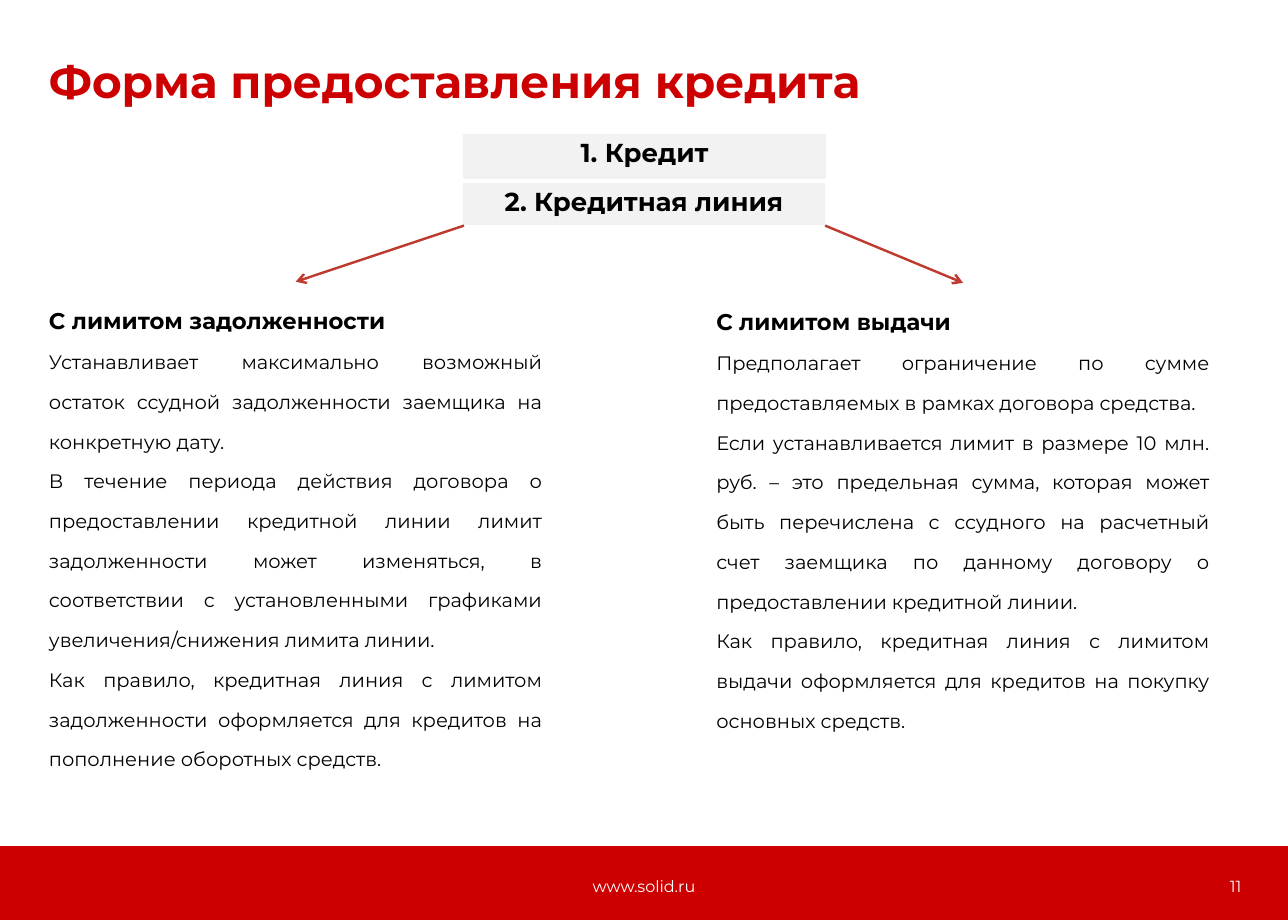
"""Builds a slide that compares two kinds of credit line."""
import pptx
import pptx.dml.color
import pptx.enum.shapes
import pptx.enum.text
import pptx.oxml.ns
import pptx.util
from lxml import etree

Inches = pptx.util.Inches
ALIGN = pptx.enum.text.PP_ALIGN
ANCHOR = pptx.enum.text.MSO_ANCHOR
RECTANGLE = pptx.enum.shapes.MSO_SHAPE.RECTANGLE
FONT = "Montserrat"
RED, GREY, BLACK, WHITE, ARROW_RED = "CC0000", "F2F2F2", "000000", "FFFFFF", "BE3B30"
PAGE_WIDTH, PAGE_HEIGHT = 11.02, 7.87

DEBT_LIMIT = [
    "С лимитом задолженности",
    "Устанавливает максимально возможный остаток ссудной задолженности заемщика "
    "на конкретную дату.",
    "В течение периода действия договора о предоставлении кредитной линии лимит "
    "задолженности может изменяться, в соответствии с установленными графиками "
    "увеличения/снижения лимита линии.",
    "Как правило, кредитная линия с лимитом задолженности оформляется для кредитов "
    "на пополнение оборотных средств.",
]
ISSUE_LIMIT = [
    "С лимитом выдачи",
    "Предполагает ограничение по сумме предоставляемых в рамках договора средства.",
    "Если устанавливается лимит в размере 10 млн. руб. – это предельная сумма, "
    "которая может быть перечислена с ссудного на расчетный счет заемщика по "
    "данному договору о предоставлении кредитной линии.",
    "Как правило, кредитная линия с лимитом выдачи оформляется для кредитов на "
    "покупку основных средств.",
]


def color(value):
    """Return the colour for a hex string."""
    return pptx.dml.color.RGBColor.from_string(value)


def add_bar(page, box, fill):
    """Add a plain rectangle of one colour."""
    bar = page.shapes.add_shape(RECTANGLE, *map(Inches, box))
    bar.shadow.inherit = False
    bar.fill.solid()
    bar.fill.fore_color.rgb = color(fill)
    bar.line.color.rgb = color(fill)
    bar.line.width = pptx.util.Pt(0.75)
    return bar


def add_text_box(page, box):
    """Add an empty text box."""
    return page.shapes.add_textbox(*map(Inches, box))


def write(shape, texts, sizes, bolds, ink, align, spacing=1.0, anchor=ANCHOR.TOP):
    """Write one paragraph per text into a shape."""
    frame = shape.text_frame
    frame.word_wrap = True
    frame.vertical_anchor = anchor
    for index, (text, size, bold) in enumerate(zip(texts, sizes, bolds)):
        para = frame.add_paragraph() if index else frame.paragraphs[0]
        para.alignment = align
        para.line_spacing = spacing
        span = para.add_run()
        span.text = text
        span.font.name = FONT
        span.font.size = pptx.util.Pt(size)
        span.font.bold = bold
        span.font.color.rgb = color(ink)


def add_title(page, box, text):
    """Add the heading of the slide."""
    write(add_text_box(page, box), [text], [28], [True], RED, ALIGN.LEFT, 0.9)


def add_option(page, box, text):
    """Add one grey bar that names a form of credit."""
    write(add_bar(page, box, GREY), [text], [16], [True], BLACK, ALIGN.CENTER, 0.9)


def add_column(page, box, texts):
    """Add a bold heading followed by justified paragraphs."""
    body = len(texts) - 1
    write(add_text_box(page, box), texts, [14] + [12] * body,
          [True] + [False] * body, BLACK, ALIGN.JUSTIFY, 1.7)


def add_arrow(page, start, end):
    """Add a red line with an open arrowhead at its end."""
    arrow = page.shapes.add_connector(
        pptx.enum.shapes.MSO_CONNECTOR.STRAIGHT, *map(Inches, start + end))
    arrow.line.color.rgb = color(ARROW_RED)
    arrow.line.width = pptx.util.Pt(1.5)
    tail = etree.SubElement(arrow.line._get_or_add_ln(), pptx.oxml.ns.qn("a:tailEnd"))
    tail.set("type", "arrow")
    etree.SubElement(arrow._element.spPr, pptx.oxml.ns.qn("a:effectLst"))


def add_footer(page, box, address, number):
    """Add the red band with the web address and the page number."""
    left, top, width, height = box
    add_bar(page, box, RED)
    label_top, label_height = top + 0.13, 0.42
    labels = [
        (address, left + (width - 3.72) / 2, 3.72, ALIGN.CENTER),
        (number, left + width - 2.78, 2.48, ALIGN.RIGHT),
    ]
    for text, label_left, label_width, align in labels:
        label = add_text_box(page, (label_left, label_top, label_width, label_height))
        write(label, [text], [9.9], [False], WHITE, align, anchor=ANCHOR.MIDDLE)


def main():
    """Build the deck and save it."""
    deck = pptx.Presentation()
    deck.slide_width = Inches(PAGE_WIDTH)
    deck.slide_height = Inches(PAGE_HEIGHT)
    page = deck.slides.add_slide(deck.slide_layouts[6])
    add_footer(page, (0, 7.24, PAGE_WIDTH, PAGE_HEIGHT - 7.24), "www.solid.ru", "11")
    add_title(page, (0.32, 0.46, 10.41, 0.68), "Форма предоставления кредита")
    add_option(page, (3.97, 1.15, 3.09, 0.38), "1. Кредит")
    add_option(page, (3.97, 1.57, 3.08, 0.35), "2. Кредитная линия")
    add_column(page, (0.32, 2.41, 4.42, 4.46), DEBT_LIMIT)
    add_column(page, (6.03, 2.42, 4.42, 4.46), ISSUE_LIMIT)
    add_arrow(page, (3.97, 1.93), (2.53, 2.41))
    add_arrow(page, (7.06, 1.93), (8.24, 2.42))
    deck.save("out.pptx")


if __name__ == "__main__":
    main()
